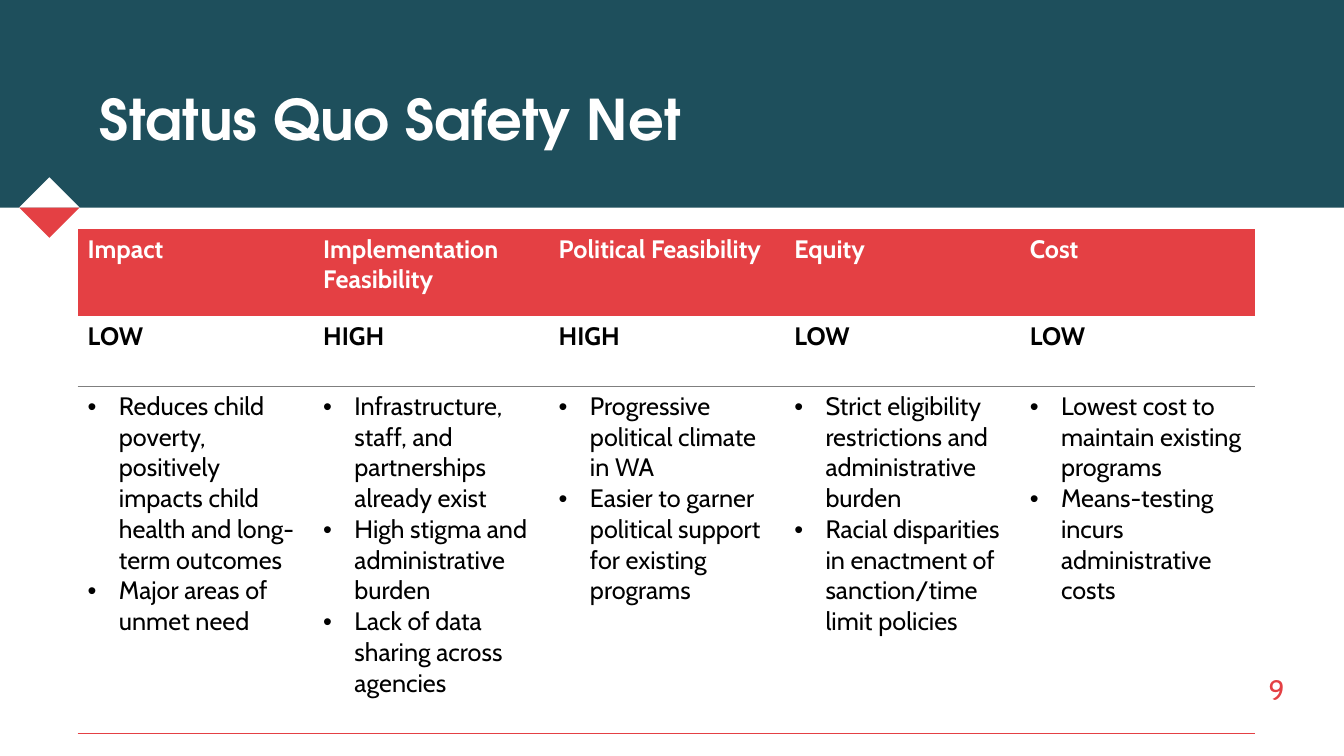
from lxml.etree import SubElement
from pptx import Presentation
from pptx.dml.color import RGBColor
from pptx.enum.shapes import MSO_SHAPE
from pptx.enum.text import MSO_ANCHOR, PP_ALIGN
from pptx.oxml.ns import qn
from pptx.util import Inches, Pt

TITLE = "Status Quo Safety Net"
PAGE = "9"
CRITERIA = [
    ("Impact", "LOW", [
        "Reduces child poverty, positively impacts child health and long-term outcomes",
        "Major areas of unmet need"]),
    ("Implementation Feasibility", "HIGH", [
        "Infrastructure, staff, and partnerships already exist",
        "High stigma and administrative burden",
        "Lack of data sharing across agencies"]),
    ("Political Feasibility", "HIGH", [
        "Progressive political climate in WA",
        "Easier to garner political support for existing programs"]),
    ("Equity", "LOW", [
        "Strict eligibility restrictions and administrative burden",
        "Racial disparities in enactment of sanction/time limit policies"]),
    ("Cost", "LOW", [
        "Lowest cost to maintain existing programs",
        "Means-testing incurs administrative costs"]),
]

TEAL, RED, WHITE, BLACK, GREY = "1E4F5C", "E44044", "FFFFFF", "000000", "7F7F7F"
TITLE_FONT = {"name": "TeX Gyre Adventor", "size": Pt(40), "bold": True}
PAGE_FONT = {"name": "Cabin", "size": Pt(20)}
HEAD_FONT = {"name": "Cabin", "size": Pt(18), "bold": True}
BODY_FONT = {"name": "Cabin", "size": Pt(18), "bold": False}

SLIDE_W, SLIDE_H = 13.33, 7.5
BAND_H = 2.06
DIAMOND_X, DIAMOND_R = 0.49, 0.3
TABLE_X, TABLE_Y, TABLE_W = 0.77, 2.27, 11.68
ROW_HEIGHTS = [0.87, 0.69, 3.45]
INDENT = 0.31
NO_STYLE = "{2D5ABB26-0587-4C30-8999-92F81FD0307C}"


def rgb(color):
    return RGBColor.from_string(color)


def paint(sp, color):
    sp.shadow.inherit = False
    sp.fill.solid()
    sp.fill.fore_color.rgb = rgb(color)
    sp.line.fill.background()


def write(p, text, font, color):
    r = p.add_run()
    r.text = text
    for key, value in font.items():
        setattr(r.font, key, value)
    r.font.color.rgb = rgb(color)


def add_text(shapes, box, text, font, color, align, bottom):
    tf = shapes.add_textbox(*map(Inches, box)).text_frame
    tf.word_wrap = True
    tf.vertical_anchor = MSO_ANCHOR.BOTTOM
    tf.margin_bottom = Inches(bottom)
    tf.paragraphs[0].alignment = align
    write(tf.paragraphs[0], text, font, color)


def add_half_diamond(shapes, tip, color):
    """Draw a triangle on the band's lower edge; tip is -1 for up, 1 for down."""
    fb = shapes.build_freeform(Inches(DIAMOND_X - DIAMOND_R), Inches(BAND_H))
    fb.add_line_segments([
        (Inches(DIAMOND_X + DIAMOND_R), Inches(BAND_H)),
        (Inches(DIAMOND_X), Inches(BAND_H + tip * DIAMOND_R))])
    paint(fb.convert_to_shape(), color)


def add_bullet(p):
    pPr = p._p.get_or_add_pPr()
    pPr.set("marL", str(Inches(INDENT)))
    pPr.set("indent", str(-Inches(INDENT)))
    SubElement(pPr, qn("a:buFont"), typeface="Arial")
    SubElement(pPr, qn("a:buChar"), char="•")


def rule_below(cell, color, width):
    tcPr = cell._tc.get_or_add_tcPr()
    ln = SubElement(tcPr, qn("a:lnB"), w=str(Pt(width)))
    fill = SubElement(ln, qn("a:solidFill"))
    SubElement(fill, qn("a:srgbClr"), val=color)


def add_criteria_table(shapes):
    frame = shapes.add_table(
        len(ROW_HEIGHTS), len(CRITERIA), Inches(TABLE_X), Inches(TABLE_Y),
        Inches(TABLE_W), Inches(sum(ROW_HEIGHTS)))
    table = frame.table
    table.horz_banding = False
    table._tbl.tblPr.find(qn("a:tableStyleId")).text = NO_STYLE
    for row, height in zip(table.rows, ROW_HEIGHTS):
        row.height = Inches(height)
    for col, (name, rating, reasons) in enumerate(CRITERIA):
        table.columns[col].width = Inches(TABLE_W / len(CRITERIA))
        head, level, detail = (table.cell(i, col) for i in range(3))
        write(head.text_frame.paragraphs[0], name, HEAD_FONT, WHITE)
        write(level.text_frame.paragraphs[0], rating, HEAD_FONT, BLACK)
        tf = detail.text_frame
        for i, reason in enumerate(reasons):
            p = tf.add_paragraph() if i else tf.paragraphs[0]
            add_bullet(p)
            write(p, reason, BODY_FONT, BLACK)
        rule_below(level, GREY, 0.75)
        rule_below(detail, RED, 1)
        head.fill.solid()
        head.fill.fore_color.rgb = rgb(RED)
        level.fill.background()
        detail.fill.background()


def main():
    prs = Presentation()
    prs.slide_width, prs.slide_height = Inches(SLIDE_W), Inches(SLIDE_H)
    shapes = prs.slides.add_slide(prs.slide_layouts[6]).shapes
    band = shapes.add_shape(
        MSO_SHAPE.RECTANGLE, 0, 0, prs.slide_width, Inches(BAND_H))
    paint(band, TEAL)
    add_half_diamond(shapes, -1, WHITE)
    add_half_diamond(shapes, 1, RED)
    add_text(shapes, (0.89, 0.49, 11.56, 1.06), TITLE, TITLE_FONT, WHITE,
             PP_ALIGN.LEFT, 0.05)
    add_text(shapes, (11.68, 6.47, 1.16, 0.54), PAGE, PAGE_FONT, RED,
             PP_ALIGN.RIGHT, 0.01)
    add_criteria_table(shapes)
    prs.save("out.pptx")


if __name__ == "__main__":
    main()
